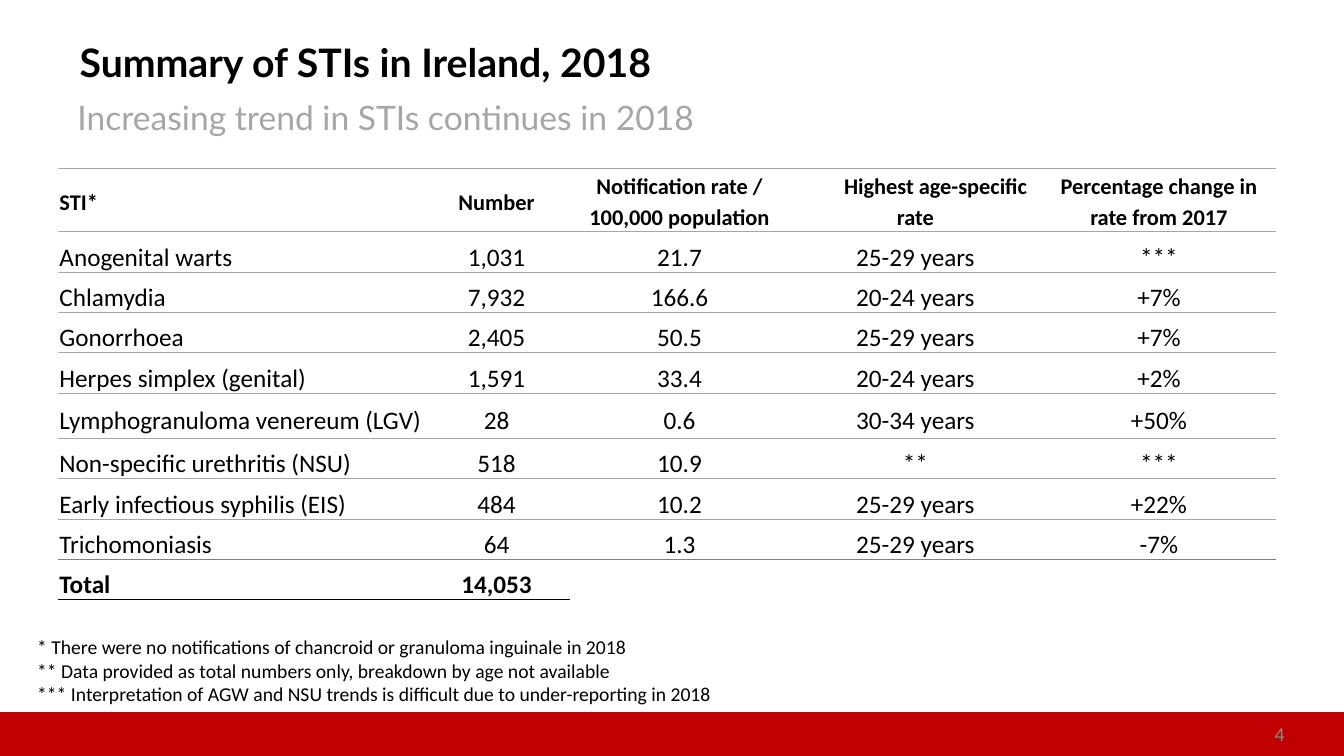
from dataclasses import dataclass

from lxml.etree import SubElement as Sub
from pptx import Presentation as Deck
from pptx.dml.color import RGBColor as Rgb
from pptx.enum.shapes import MSO_SHAPE as Shape
from pptx.enum.text import MSO_ANCHOR as Anchor, PP_ALIGN as Align
from pptx.oxml.ns import qn
from pptx.util import Pt

PX = 9144  # 100 px to the inch


@dataclass(frozen=True)
class Theme:
    red: str = "C00000"
    black: str = "000000"
    white: str = "FFFFFF"
    light: str = "A6A6A6"
    dark: str = "808080"
    pale: str = "8C8C8C"
    head: str = "Lato"
    body: str = "Calibri"
    title: int = 28
    sub: int = 24
    cell: int = 18
    label: int = 16
    note: int = 14


theme = Theme()


def write(para, text, face, size, color, bold=False):
    run = para.add_run()
    run.text = text
    font = run.font
    font.name, font.size, font.bold = face, Pt(size), bold
    font.color.rgb = Rgb.from_string(color)


def rule(cell, side, color=None, width=0):
    """Set one border of a cell; without a color the border is off."""
    line = Sub(cell._tc.get_or_add_tcPr(), qn("a:ln" + side), w=str(Pt(width)))
    if color:
        Sub(Sub(line, qn("a:solidFill")), qn("a:srgbClr"), val=color)
    else:
        Sub(line, qn("a:noFill"))


deck = Deck()
deck.slide_width, deck.slide_height = 1333 * PX, 750 * PX
slide = deck.slides.add_slide(deck.slide_layouts[6])
shapes = slide.shapes

# Footer band
band = shapes.add_shape(Shape.RECTANGLE, 0, 708 * PX, 1333 * PX, 42 * PX)
band.shadow.inherit = False
band.fill.solid()
band.fill.fore_color.rgb = band.line.color.rgb = Rgb.from_string(theme.red)
band.line.width = Pt(2)

# Text boxes: place, insets (side, top), anchor, alignment, lines, style
notes = [
    "* There were no notifications of chancroid or granuloma inguinale in 2018",
    "** Data provided as total numbers only, breakdown by age not available",
    "*** Interpretation of AGW and NSU trends is difficult due to under-reporting in 2018",
]
boxes = [
    ((67, 30, 1033, 62), (12, 6), Anchor.MIDDLE, Align.LEFT,
     ["Summary of STIs in Ireland, 2018"],
     (theme.head, theme.title, theme.black, True)),
    ((67, 91, 708, 50), (10, 5), Anchor.TOP, Align.LEFT,
     ["Increasing trend in STIs continues in 2018"],
     (theme.head, theme.sub, theme.light)),
    ((27, 625, 842, 81), (10, 5), Anchor.TOP, Align.LEFT,
     notes, (theme.body, theme.note, theme.black)),
    ((975, 708, 311, 40), (12, 6), Anchor.MIDDLE, Align.RIGHT,
     ["4"], (theme.body, theme.note, theme.pale)),
]
for place, (side, top), anchor, align, lines, style in boxes:
    frame = shapes.add_textbox(*(n * PX for n in place)).text_frame
    frame.word_wrap = True
    frame.vertical_anchor = anchor
    frame.margin_left = frame.margin_right = side * PX
    frame.margin_top = frame.margin_bottom = top * PX
    for i, text in enumerate(lines):
        para = frame.add_paragraph() if i else frame.paragraphs[0]
        para.alignment = align
        write(para, text, *style)

# Table
rows = [
    ("STI*", "Number", "Notification rate / 100,000 population",
     "Highest age-specific rate", "Percentage change in rate from 2017"),
    ("Anogenital warts", "1,031", "21.7", "25-29 years", "***"),
    ("Chlamydia", "7,932", "166.6", "20-24 years", "+7%"),
    ("Gonorrhoea", "2,405", "50.5", "25-29 years", "+7%"),
    ("Herpes simplex (genital)", "1,591", "33.4", "20-24 years", "+2%"),
    ("Lymphogranuloma venereum (LGV)", "28", "0.6", "30-34 years", "+50%"),
    ("Non-specific urethritis (NSU)", "518", "10.9", "**", "***"),
    ("Early infectious syphilis (EIS)", "484", "10.2", "25-29 years", "+22%"),
    ("Trichomoniasis", "64", "1.3", "25-29 years", "-7%"),
    ("Total", "14,053", "", "", ""),
]
wide = [362, 145, 218, 250, 233]
tall = [63, 35, 35, 35, 35, 45, 35, 35, 37, 37]
last = len(rows) - 1

# One rule above each row, then the one that closes the table
thin = (theme.light, 0.5)
rules = [(theme.light, 1)] * 2 + [thin] * (last - 2) + [(theme.dark, 1)]

holder = shapes.add_table(len(rows), len(wide), 58 * PX, 167 * PX, 1208 * PX, 428 * PX)
table = holder.table
table.first_row = table.horz_banding = False
for col, width in zip(table.columns, wide):
    col.width = width * PX
for row, height in zip(table.rows, tall):
    row.height = height * PX
holder.height = 428 * PX

for r, row in enumerate(rows):
    for c, text in enumerate(row):
        cell = table.cell(r, c)
        cell.vertical_anchor = Anchor.MIDDLE
        cell.margin_left = cell.margin_right = cell.margin_top = PX
        cell.margin_bottom = 0
        end = (theme.black if text else theme.white, 1)
        rule(cell, "L")
        rule(cell, "R")
        rule(cell, "T", *rules[r])
        rule(cell, "B", *(end if r == last else rules[r + 1]))
        cell.fill.background()
        para = cell.text_frame.paragraphs[0]
        para.alignment = Align.CENTER if c else Align.LEFT
        para.line_spacing = 1.3 if r else 1.14
        size = theme.cell if r else theme.label
        if text:
            write(para, text, theme.body, size, theme.black, r in (0, last))
        else:
            para.font.size = Pt(size)

# The age heading starts with an indent
age = table.cell(0, 3).text_frame.paragraphs[0]
age._p.get_or_add_pPr().set("indent", str(40 * PX))

deck.save("out.pptx")
